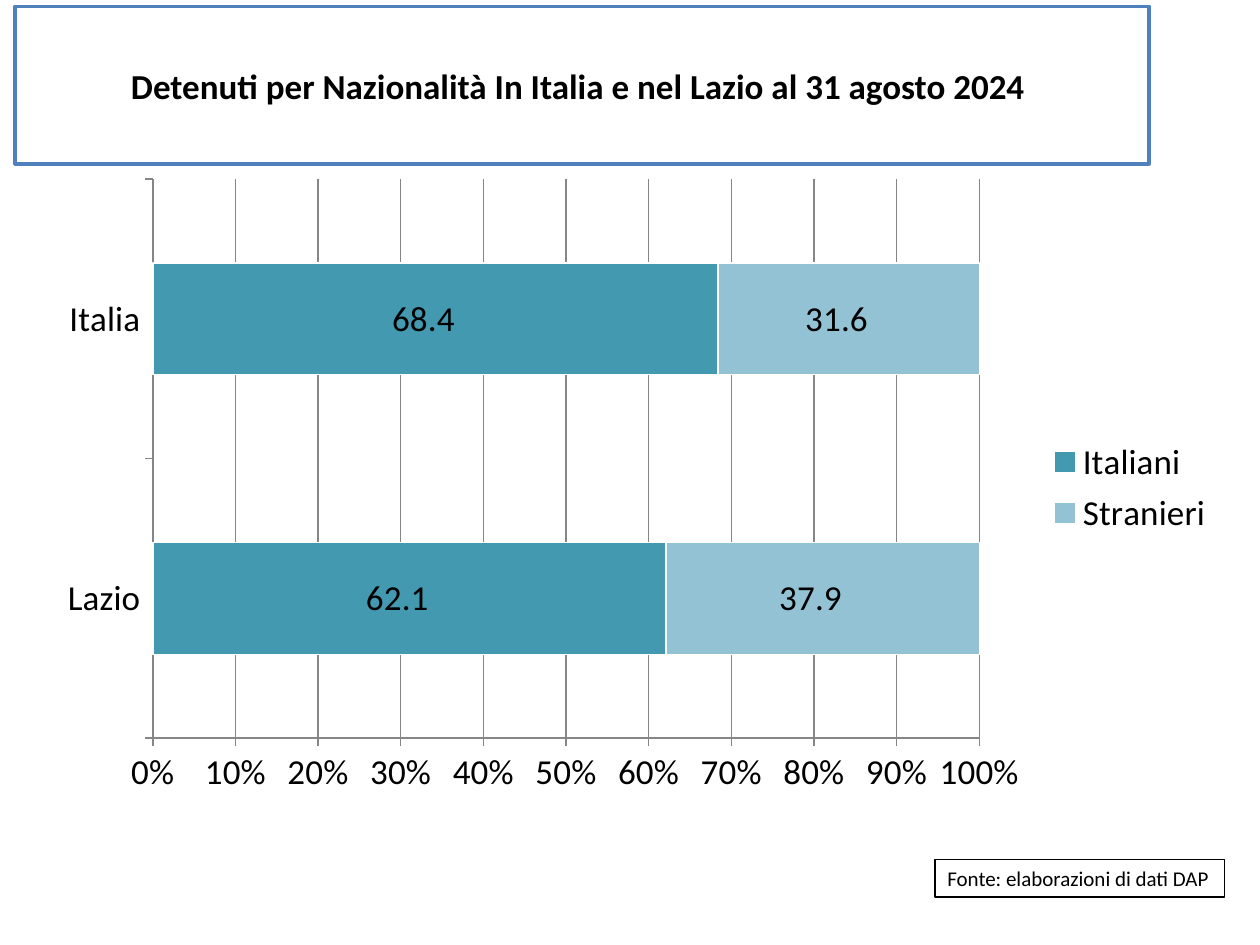
from lxml import etree
from pptx import Presentation, util as u
from pptx.chart.data import CategoryChartData
from pptx.dml.color import RGBColor
from pptx.enum import chart as ch, text
from pptx.oxml import parse_xml

deck = Presentation()
deck.slide_width, deck.slide_height = u.Inches(10), u.Inches(7.5)
slide = deck.slides.add_slide(deck.slide_layouts[6])


def color(value):
    return RGBColor.from_string(value)


def share(left, top, width, height):
    across, down = deck.slide_width / 100, deck.slide_height / 100
    return [int(n) for n in (left * across, top * down, width * across, height * down)]


captions = [
    ("Detenuti per Nazionalità In Italia e nel Lazio al 31 agosto 2024 ",
     share(1.2, 0.67, 90, 16.67), "4F81BD", 2, True, text.PP_ALIGN.CENTER,
     {"size": u.Pt(20), "bold": True, "name": "Calibri"}),
    ("Fonte: elaborazioni di dati DAP",
     share(74.2, 90.93, 23, 4), "000000", 0.75, False, text.PP_ALIGN.LEFT,
     {"size": u.Pt(12), "name": "Calibri"}),
]
for wording, place, edge, weight, wrap, align, style in captions:
    caption = slide.shapes.add_textbox(*place)
    caption.fill.solid()
    caption.fill.fore_color.rgb = color("FFFFFF")
    caption.line.color.rgb = color(edge)
    caption.line.width = u.Pt(weight)
    frame = caption.text_frame
    frame.word_wrap = wrap
    frame.vertical_anchor = text.MSO_ANCHOR.MIDDLE
    line = frame.paragraphs[0]
    line.alignment = align
    run = line.add_run()
    run.text = wording
    run.font.color.rgb = color("000000")
    for key, value in style.items():
        setattr(run.font, key, value)

shares = CategoryChartData(number_format="0.0")
shares.categories = ["Lazio", "Italia"]
shares.add_series("Italiani", [62.1, 68.4])
shares.add_series("Stranieri", [37.9, 31.6])
detainees = slide.shapes.add_chart(
    ch.XL_CHART_TYPE.BAR_STACKED_100, *share(3.7, 17.6, 93.7, 68), shares).chart
detainees.has_title = False
detainees.font.color.rgb = color("000000")
for key, value in {"size": u.Pt(20), "name": "Calibri"}.items():
    setattr(detainees.font, key, value)

detainees.has_legend = True
for key, value in {"position": ch.XL_LEGEND_POSITION.RIGHT, "include_in_layout": False}.items():
    setattr(detainees.legend, key, value)

bars = detainees.plots[0]
for key, value in {"gap_width": 150, "overlap": 100, "vary_by_categories": False}.items():
    setattr(bars, key, value)

label_format = {
    "show_value": True,
    "position": ch.XL_LABEL_POSITION.CENTER,
    "number_format": r'_-* #,##0.0\ _€_-;\-* #,##0.0\ _€_-;_-* "-"??\ _€_-;_-@_-',
    "number_format_is_linked": False,
}
for group, tint in zip(bars.series, ["4299B0", "92C2D4"]):
    group.format.fill.solid()
    group.format.fill.fore_color.rgb = color(tint)
    group.format.line.color.rgb = color("FFFFFF")
    group.format.line.width = u.Pt(0.75)
    for key, value in label_format.items():
        setattr(group.data_labels, key, value)

percent = detainees.value_axis
for key, value in {"minimum_scale": 0, "maximum_scale": 1, "major_unit": 0.1,
                   "has_major_gridlines": True}.items():
    setattr(percent, key, value)
percent.tick_labels.number_format = "0%"
percent.tick_labels.number_format_is_linked = False
for rule in (percent.major_gridlines, percent, detainees.category_axis):
    rule.format.line.color.rgb = color("868686")
    rule.format.line.width = u.Pt(0.75)
for axis in (percent, detainees.category_axis):
    axis.major_tick_mark = ch.XL_TICK_MARK.OUTSIDE

layout = parse_xml(
    '<c:layout xmlns:c="http://schemas.openxmlformats.org/drawingml/2006/chart">'
    '<c:manualLayout><c:layoutTarget val="inner"/><c:xMode val="edge"/><c:yMode val="edge"/>'
    '<c:x val="0.09"/><c:y val="0.02"/><c:w val="0.7"/><c:h val="0.87"/>'
    '</c:manualLayout></c:layout>')
plot_area = detainees._chartSpace.chart.plotArea
for old in plot_area.findall(etree.QName(layout).text):
    plot_area.remove(old)
plot_area.insert(0, layout)

deck.save("out.pptx")
